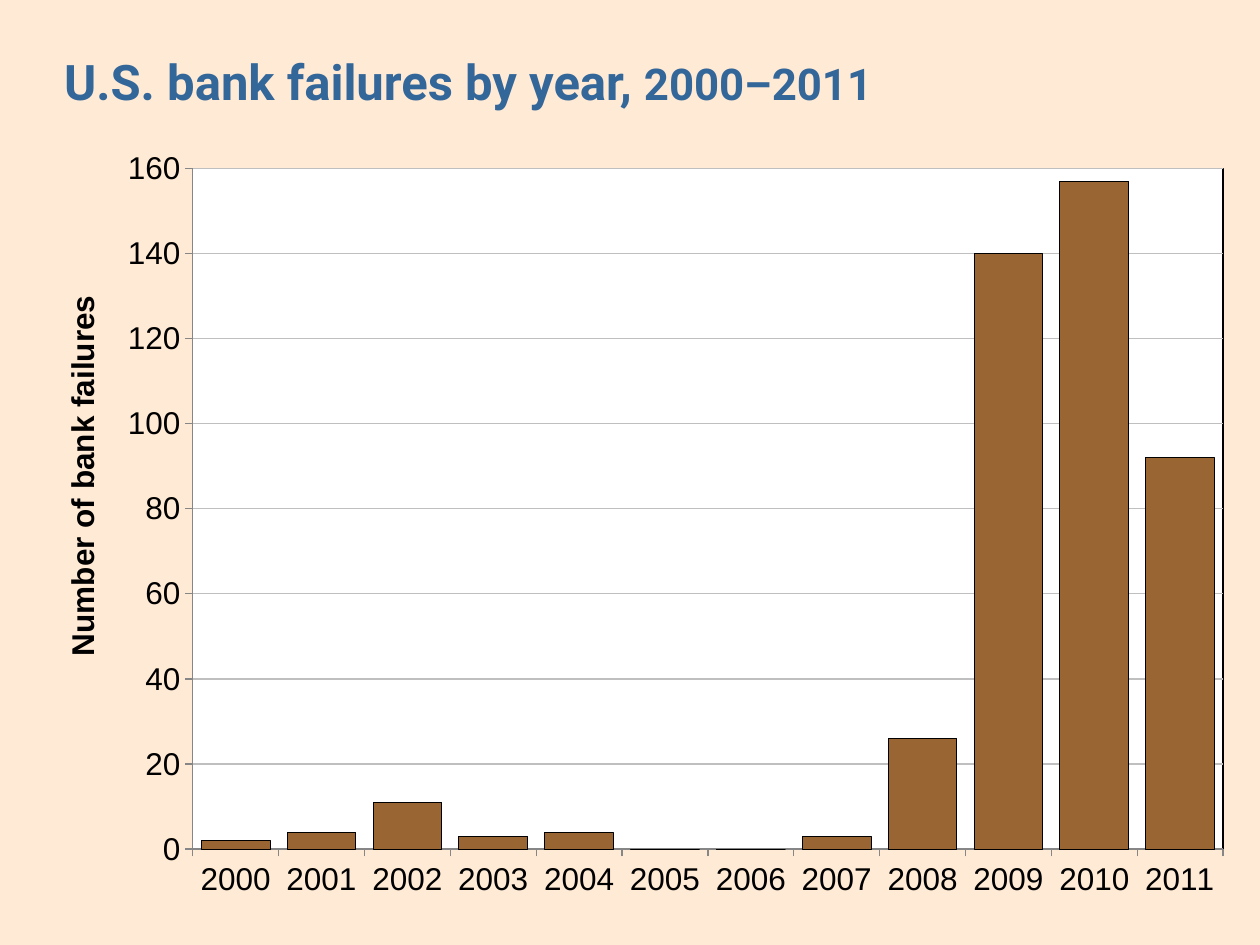
from dataclasses import dataclass

from lxml import etree
from pptx import Presentation
from pptx.chart.data import CategoryChartData
from pptx.dml.color import RGBColor
from pptx.enum.chart import XL_CHART_TYPE, XL_TICK_MARK
from pptx.enum.text import MSO_ANCHOR, PP_ALIGN
from pptx.oxml import parse_xml
from pptx.oxml.ns import nsdecls, qn
from pptx.util import Inches, Pt

COLUMN_CLUSTERED = XL_CHART_TYPE.COLUMN_CLUSTERED
TICK_OUTSIDE = XL_TICK_MARK.OUTSIDE
ANCHOR_MIDDLE = MSO_ANCHOR.MIDDLE
ALIGN_LEFT = PP_ALIGN.LEFT
TITLE_ONLY_LAYOUT = 5


@dataclass(frozen=True)
class Theme:
    background: str = "FFEAD5"
    heading: str = "336699"
    text: str = "000000"
    column: str = "996633"
    plot: str = "FFFFFF"
    grid: str = "BFBFBF"
    axis: str = "868686"
    heading_font: str = "Roboto"
    chart_font: str = "Arial"
    heading_size: float = 28
    years_size: float = 25
    chart_size: float = 18


THEME = Theme()
FAILURES = dict(zip(range(2000, 2012), (2, 4, 11, 3, 4, 0, 0, 3, 26, 140, 157, 92)))


def rgb(color):
    return RGBColor.from_string(color)


def format_font(font, *, size, color, name, bold=False):
    font.size = Pt(size)
    font.color.rgb = rgb(color)
    font.name = name
    font.bold = bold


def add_text(paragraph, text, **font_format):
    run = paragraph.add_run()
    run.text = text
    format_font(run.font, **font_format)


def format_line(line, color, width):
    line.color.rgb = rgb(color)
    line.width = Pt(width)


def set_layout(element, index, **settings):
    """Give a chart part a manual layout, as fractions of the chart."""
    for old_layout in element.findall(qn("c:layout")):
        element.remove(old_layout)
    layout = parse_xml(f"<c:layout {nsdecls('c')}><c:manualLayout/></c:layout>")
    for name, value in settings.items():
        etree.SubElement(layout[0], qn(f"c:{name}")).set("val", str(value))
    element.insert(index, layout)


def fill_plot(plot_area):
    plot_area.append(parse_xml(
        f"<c:spPr {nsdecls('c', 'a')}>"
        f'<a:solidFill><a:srgbClr val="{THEME.plot}"/></a:solidFill>'
        f'<a:ln w="{Pt(0.75)}"><a:solidFill><a:srgbClr val="{THEME.text}"/>'
        "</a:solidFill></a:ln></c:spPr>"
    ))


def place_title(slide, left, top, width, height):
    title = slide.shapes.title
    title.left, title.top, title.width, title.height = left, top, width, height
    frame = title.text_frame
    frame.margin_left = frame.margin_right = frame.margin_top = frame.margin_bottom = 0
    frame.vertical_anchor = ANCHOR_MIDDLE
    frame.word_wrap = True
    paragraph = frame.paragraphs[0]
    paragraph.alignment = ALIGN_LEFT
    paragraph.line_spacing = 1.05
    style = {"color": THEME.heading, "name": THEME.heading_font, "bold": True}
    add_text(paragraph, "U.S. bank failures by year, ", size=THEME.heading_size, **style)
    add_text(paragraph, "2000–2011", size=THEME.years_size, **style)


def place_chart(slide, left, top, width, height):
    data = CategoryChartData()
    data.categories = [str(year) for year in FAILURES]
    data.add_series("Series 1", FAILURES.values())
    chart = slide.shapes.add_chart(COLUMN_CLUSTERED, left, top, width, height, data).chart
    chart.has_legend = False
    chart.has_title = False
    style = {"size": THEME.chart_size, "color": THEME.text, "name": THEME.chart_font}
    format_font(chart.font, **style)

    # Columns
    plot = chart.plots[0]
    plot.gap_width = 25
    plot.vary_by_categories = False
    columns = plot.series[0].format
    columns.fill.solid()
    columns.fill.fore_color.rgb = rgb(THEME.column)
    format_line(columns.line, THEME.text, 0.5)

    # Axes and gridlines
    value_axis = chart.value_axis
    for axis in (chart.category_axis, value_axis):
        axis.major_tick_mark = TICK_OUTSIDE
        format_line(axis.format.line, THEME.axis, 0.75)
    value_axis.minimum_scale = 0
    value_axis.maximum_scale = 160
    value_axis.major_unit = 20
    format_line(value_axis.major_gridlines.format.line, THEME.grid, 0.75)

    # Axis title
    axis_title = value_axis.axis_title
    paragraph = axis_title.text_frame.paragraphs[0]
    add_text(paragraph, "Number of bank failures", bold=True, **style)
    axis_title.text_frame._txBody.bodyPr.set("rot", "-5400000")
    axis_title.text_frame._txBody.bodyPr.set("vert", "horz")
    set_layout(axis_title._element, 1, xMode="edge", yMode="edge", x=0.05, y=0.18)

    # Plot area
    plot_area = chart._chartSpace.chart.plotArea
    set_layout(plot_area, 0, layoutTarget="inner", xMode="edge", yMode="edge",
               x=0.158, y=0.028, w=0.813, h=0.852)
    fill_plot(plot_area)


def main():
    presentation = Presentation()
    presentation.slide_width = Inches(10)
    presentation.slide_height = Inches(7.5)
    slide = presentation.slides.add_slide(presentation.slide_layouts[TITLE_ONLY_LAYOUT])
    slide.background.fill.solid()
    slide.background.fill.fore_color.rgb = rgb(THEME.background)
    place_title(slide, Inches(0.51), Inches(0.26), Inches(9.02), Inches(0.74))
    place_chart(slide, Inches(-0.06), Inches(1.16), Inches(10.06), Inches(6.34))
    presentation.save("out.pptx")


if __name__ == "__main__":
    main()
